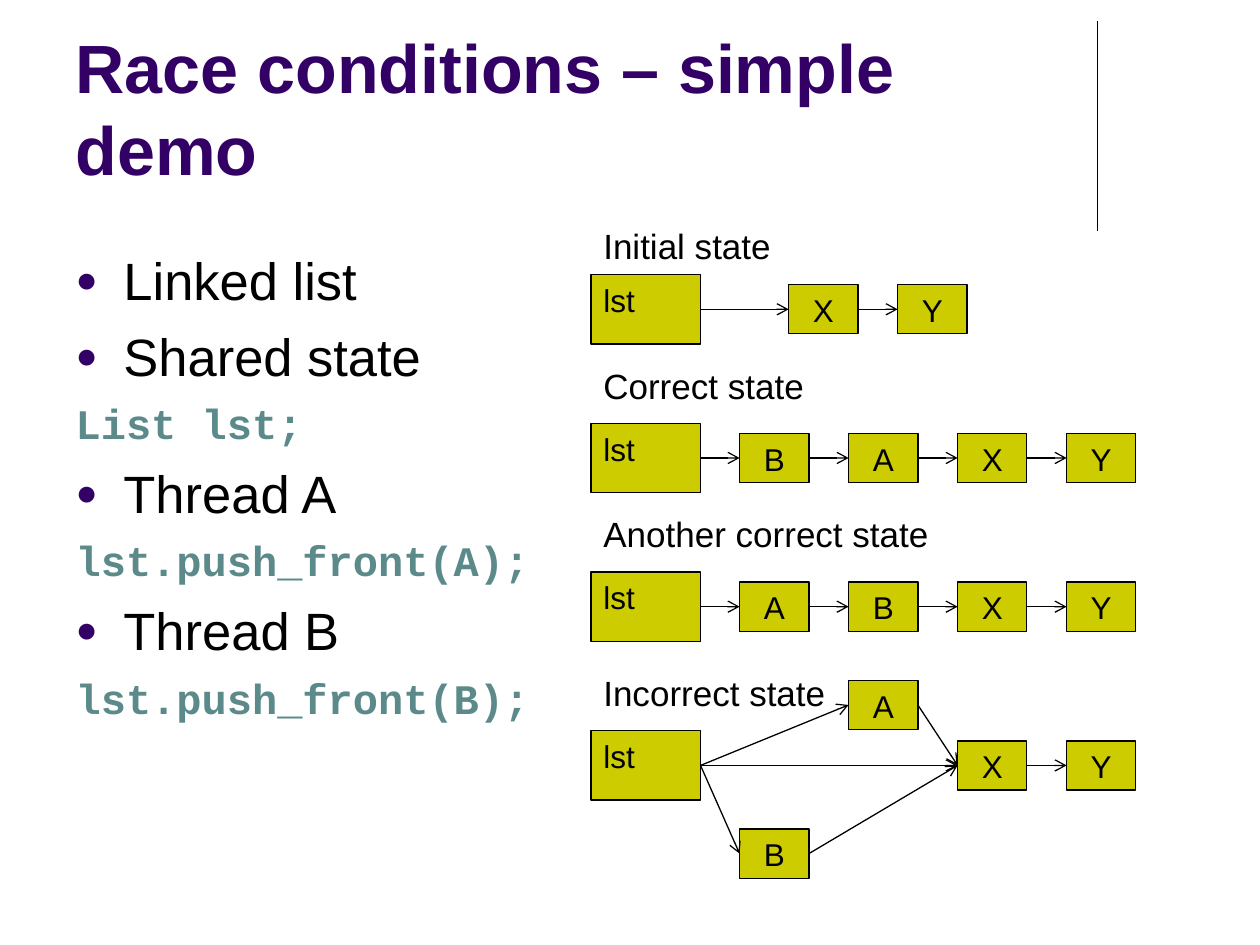
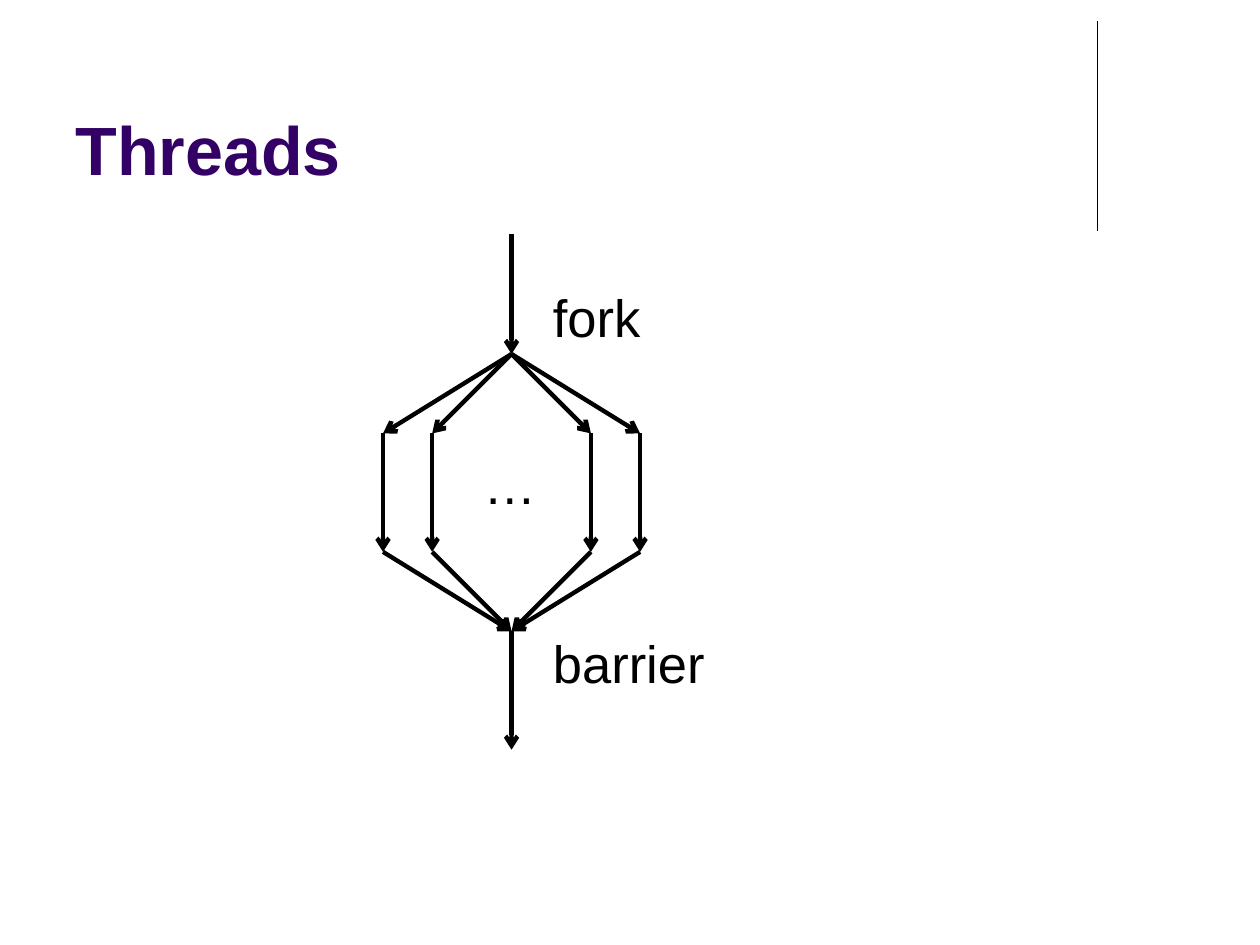
import lxml.etree
import pptx
import pptx.dml.color
import pptx.enum.shapes
import pptx.enum.text
import pptx.oxml.ns
import pptx.util

Inches = pptx.util.Inches
PURPLE = pptx.dml.color.RGBColor(0x33, 0x00, 0x66)
TEAL = pptx.dml.color.RGBColor(0x5C, 0x8A, 0x8A)
OLIVE = pptx.dml.color.RGBColor(0xCC, 0xCC, 0x00)
BLACK = pptx.dml.color.RGBColor(0x00, 0x00, 0x00)
TITLE_ONLY, TITLE_AND_BODY = 5, 1
LEFT_SITE, RIGHT_SITE = 1, 3


def add_xml(parent, tag, **attributes):
    """Append a drawing element and return it."""
    return lxml.etree.SubElement(parent, pptx.oxml.ns.qn(tag), **attributes)


class SlideWriter:
    """Hold the deck style and the current page."""

    text_font = "Arial"
    code_font = "Courier New"

    def __init__(self):
        self.deck = pptx.Presentation()
        self.deck.slide_width = Inches(10)
        self.deck.slide_height = Inches(7.5)
        self.page = None

    def add_page(self, title, layout):
        """Start a page with its title."""
        self.page = self.deck.slides.add_slide(self.deck.slide_layouts[layout])
        box = self.page.shapes.title
        self.place(box, 0.5, 0.13, 8.25, 1.42)
        box.text_frame.text = title
        box.text_frame.vertical_anchor = pptx.enum.text.MSO_ANCHOR.BOTTOM
        self.format(box.text_frame.paragraphs[0], 39, PURPLE, bold=True)

    def add_master_rule(self):
        """Draw the vertical rule once, on the slide master."""
        rule = self.line((8.71, 0.17), (8.71, 1.83))
        self.deck.slide_master.element.cSld.spTree.append(rule.element)

    def place(self, box, left, top, width, height):
        """Set the place and size of a box."""
        box.left, box.top = Inches(left), Inches(top)
        box.width, box.height = Inches(width), Inches(height)

    def format(self, paragraph, size, color=BLACK, bold=False, font=text_font, centered=False):
        """Align a paragraph and style its runs."""
        align = pptx.enum.text.PP_ALIGN
        paragraph.alignment = align.CENTER if centered else align.LEFT
        for span in paragraph.runs:
            span.font.name = font
            span.font.size = pptx.util.Pt(size)
            span.font.bold = bold
            span.font.color.rgb = color

    def body(self, items):
        """Fill the body placeholder with bullets and code lines."""
        box = self.page.placeholders[1]
        self.place(box, 0.5, 1.88, 3.87, 4.82)
        frame = box.text_frame
        frame.auto_size = pptx.enum.text.MSO_AUTO_SIZE.NONE
        frame.margin_top = Inches(0.09)
        frame.text = "\n".join(text for text, is_code in items)
        for index, (paragraph, (text, is_code)) in enumerate(zip(frame.paragraphs, items)):
            size = 24 if is_code else 30
            paragraph.space_before = pptx.util.Pt(size * 0.25 if index else 0)
            self.bullet(paragraph, is_code)
            if is_code:
                self.format(paragraph, size, TEAL, bold=True, font=self.code_font)
            else:
                self.format(paragraph, size)

    def bullet(self, paragraph, hidden):
        """Indent a paragraph and give it a bullet unless hidden."""
        properties = paragraph._p.get_or_add_pPr()
        properties.set("marL", str(Inches(0.38)))
        properties.set("indent", str(-Inches(0.38)))
        if hidden:
            add_xml(properties, "a:buNone")
            return
        add_xml(add_xml(properties, "a:buClr"), "a:srgbClr", val=str(PURPLE))
        add_xml(properties, "a:buSzPct", val="70000")
        add_xml(properties, "a:buFont", typeface=self.text_font)
        add_xml(properties, "a:buChar", char="●")

    def label(self, text, left, top, width, height, size):
        """Add a text label."""
        box = self.page.shapes.add_textbox(Inches(left), Inches(top), Inches(width), Inches(height))
        frame = box.text_frame
        frame.text = text
        frame.word_wrap = False
        frame.auto_size = pptx.enum.text.MSO_AUTO_SIZE.SHAPE_TO_FIT_TEXT
        frame.margin_top = Inches(0.08)
        frame.margin_bottom = Inches(0.02)
        self.format(frame.paragraphs[0], size)

    def node(self, text, left, top, width=0.55, height=0.39, centered=True):
        """Add a filled list node."""
        box = self.page.shapes.add_shape(
            pptx.enum.shapes.MSO_SHAPE.RECTANGLE,
            Inches(left), Inches(top), Inches(width), Inches(height))
        box.shadow.inherit = False
        box.fill.solid()
        box.fill.fore_color.rgb = OLIVE
        box.line.color.rgb = BLACK
        box.line.width = pptx.util.Pt(0.75)
        box.text_frame.text = text
        box.text_frame.word_wrap = True
        box.text_frame.vertical_anchor = pptx.enum.text.MSO_ANCHOR.TOP
        self.format(box.text_frame.paragraphs[0], 18, centered=centered)
        return box

    def line(self, start, end, weight=0.75):
        """Add a straight black line."""
        line = self.page.shapes.add_connector(
            pptx.enum.shapes.MSO_CONNECTOR.STRAIGHT, *map(Inches, start + end))
        line.line.color.rgb = BLACK
        line.line.width = pptx.util.Pt(weight)
        add_xml(line.element.spPr, "a:effectLst")
        return line

    def arrow(self, start, end, weight=0.75):
        """Add a line with an open arrowhead at its end."""
        arrow = self.line(start, end, weight)
        add_xml(arrow.line._get_or_add_ln(), "a:tailEnd", type="arrow")
        return arrow

    def link(self, source, target):
        """Join the right side of one node to the left side of another."""
        arrow = self.arrow((0, 0), (1, 1))
        arrow.begin_connect(source, RIGHT_SITE)
        arrow.end_connect(target, LEFT_SITE)

    def list_state(self, caption, caption_top, caption_width, top, places):
        """Draw a captioned list head and its nodes, given as name: (left, rise)."""
        self.label(caption, 4.69, caption_top, caption_width, 0.44, 20)
        nodes = {"lst": self.node("lst", 4.69, top, 0.87, 0.55, centered=False)}
        for name, (left, rise) in places.items():
            nodes[name] = self.node(name, left, top + 0.08 - rise)
        return nodes


def column(index):
    """Return the left edge of a node column."""
    return 5.87 + 0.865 * index


def build_race_conditions(writer):
    """Build the page on race conditions."""
    writer.add_page("Race conditions – simple demo", TITLE_AND_BODY)
    writer.add_master_rule()
    writer.body([
        ("Linked list", False),
        ("Shared state", False),
        ("List lst;", True),
        ("Thread A", False),
        ("lst.push_front(A);", True),
        ("Thread B", False),
        ("lst.push_front(B);", True),
    ])
    chains = [
        ("Initial state", 1.7, 1.54, 2.18, "XY", 0.45),
        ("Correct state", 2.81, 1.8, 3.36, "BAXY", 0),
        ("Another correct state", 3.99, 2.8, 4.54, "ABXY", 0),
    ]
    for caption, caption_top, width, top, names, first in chains:
        places = {name: (column(first + index), 0) for index, name in enumerate(names)}
        nodes = list(writer.list_state(caption, caption_top, width, top, places).values())
        for source, target in zip(nodes, nodes[1:]):
            writer.link(source, target)

    places = {"B": (column(0), -0.7), "A": (column(1), 0.48),
              "X": (column(2), 0), "Y": (column(3), 0)}
    nodes = writer.list_state("Incorrect state", 5.25, 1.97, 5.8, places)
    for source, target in [("lst", "A"), ("lst", "X"), ("lst", "B"),
                           ("A", "X"), ("B", "X"), ("X", "Y")]:
        writer.link(nodes[source], nodes[target])


def build_threads(writer):
    """Build the page on forking and joining threads."""
    writer.add_page("Threads", TITLE_ONLY)
    center, weight = 4.06, 2.5
    fork, barrier = (center, 2.81), (center, 5.01)
    writer.arrow((center, 1.86), fork, weight)
    for offset in (-1.02, -0.63, 0.63, 1.02):
        begin, finish = (center + offset, 3.44), (center + offset, 4.38)
        writer.arrow(fork, begin, weight)
        writer.arrow(begin, finish, weight)
        writer.arrow(finish, barrier, weight)
    writer.arrow(barrier, (center, 5.95), weight)
    for text, left, top, width in [("fork", 4.29, 2.18, 1.02),
                                   ("barrier", 4.29, 4.93, 1.57),
                                   ("…", 3.74, 3.51, 0.63)]:
        writer.label(text, left, top, width, 0.61, 30)


def main():
    """Build and save the deck."""
    writer = SlideWriter()
    build_race_conditions(writer)
    build_threads(writer)
    writer.deck.save("out.pptx")


if __name__ == "__main__":
    main()
